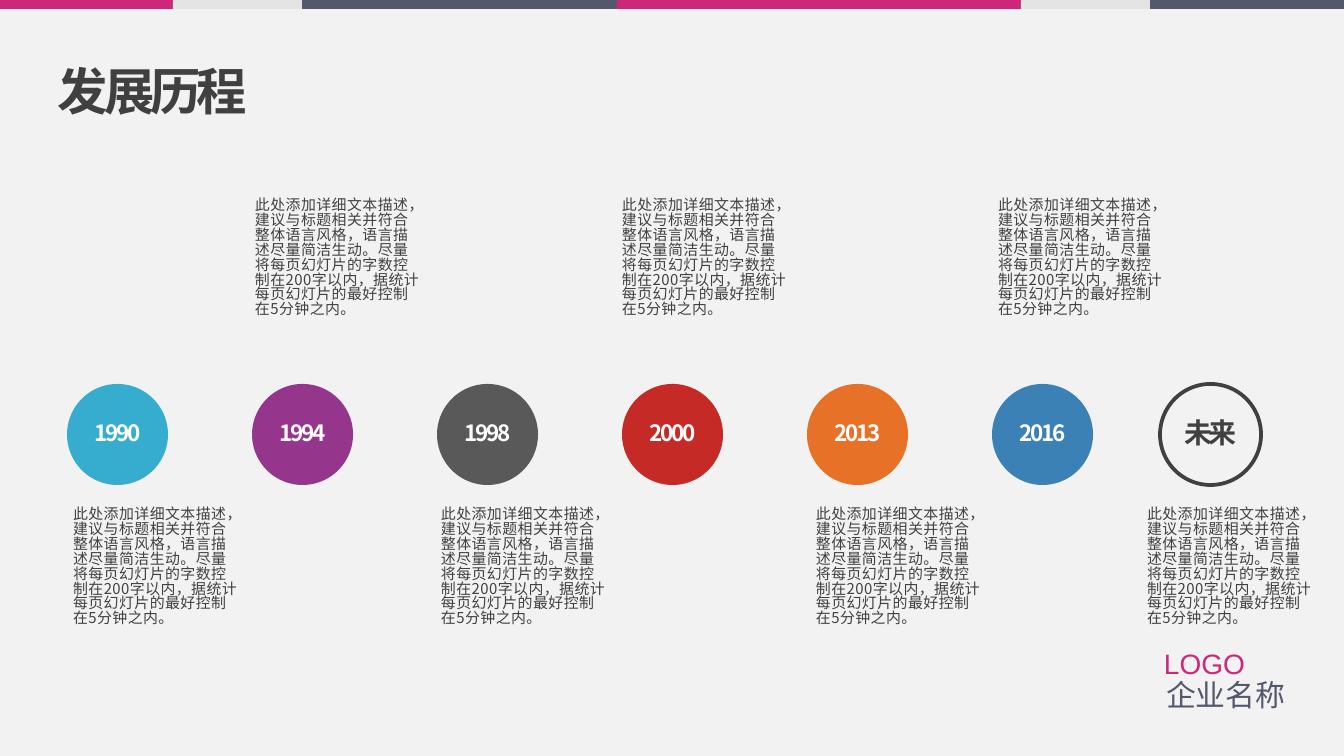
from lxml import etree
from pptx import Presentation
from pptx.dml.color import RGBColor
from pptx.enum.shapes import MSO_SHAPE
from pptx.enum.text import MSO_ANCHOR, MSO_AUTO_SIZE, PP_ALIGN
from pptx.oxml.ns import qn
from pptx.util import Pt

RECTANGLE, OVAL = MSO_SHAPE.RECTANGLE, MSO_SHAPE.OVAL
TOP, MIDDLE = MSO_ANCHOR.TOP, MSO_ANCHOR.MIDDLE
LEFT, CENTER = PP_ALIGN.LEFT, PP_ALIGN.CENTER
GROW = MSO_AUTO_SIZE.SHAPE_TO_FIT_TEXT

EMU_PER_PX = 914400 / 134.4
CJK = "Noto Sans CJK SC"

THEME = {
    "background": "F2F2F2", "slate": "53586C", "pink": "CD2779", "pale": "E4E4E4",
    "ink": "404040", "white": "FFFFFF",
    # Text styles: font, size, colour, bold, letter spacing, line spacing
    "title": (CJK, 27, "ink", True, -2.2, 0.9),
    "year": (CJK, 12, "white", True, -1.1, 0.9),
    "future": (CJK, 15, "ink", True, -2.2, 0.9),
    "description": (CJK, 8, "ink", False, 0.2, 0.83),
    "company": ("Arial", 16, "slate", False, 0, 1),
    "logo": ("Arial", 15, "pink", False, 0, 1),
}

TITLE = "发展历程"
DESCRIPTION = (
    "此处添加详细文本描述，建议与标题相关并符合整体语言风格，语言描述尽量简洁生动。"
    "尽量将每页幻灯片的字数控制在200字以内，据统计每页幻灯片的最好控制在5分钟之内。"
)
# Label, circle colour (None for an outline), left edge of the description
MILESTONES = [
    ("1990", "36ADCE", 63),
    ("1994", "95358B", 245),
    ("1998", "595959", 431),
    ("2000", "C62A27", 612),
    ("2013", "E67127", 806),
    ("2016", "3C81B5", 988),
    ("未来", None, 1137),
]
# Left, width and colour, from back to front
BAR_SEGMENTS = [
    (930, 414, "slate"), (0, 414, "pink"), (249, 414, "slate"),
    (173, 129, "pale"), (617, 414, "pink"), (1021, 129, "pale"),
]
BRANDING = [
    ("企业名称", "company", (1153, 667, 181, 56)),
    ("LOGO", "logo", (1151, 637, 203, 52)),
]

SLIDE_SIZE = (1344, 756)
BAR_HEIGHT = 9
TITLE_BOX = (48, 62, 331, 71)
CIRCLE_LEFT, CIRCLE_TOP, CIRCLE_SIZE, CIRCLE_PITCH = 67, 384, 101, 185
FUTURE_LEFT = 1160
DESCRIPTION_SIZE = (188, 160)
DESCRIPTION_ABOVE, DESCRIPTION_BELOW = 194, 503
INSETS, TIGHT_INSETS, WIDE_INSETS = (10, 5), (4, 5), (13, 7)


def px(*lengths):
    return [round(length * EMU_PER_PX) for length in lengths]


def color(name):
    return RGBColor.from_string(THEME.get(name, name))


def write(shape, text, style, alignment=LEFT, anchor=TOP, insets=INSETS):
    font_name, size, ink, bold, letter_spacing, line_spacing = THEME[style]
    frame = shape.text_frame
    frame.text = text
    frame.word_wrap = True
    frame.vertical_anchor = anchor
    side, end = px(*insets)
    frame.margin_left = frame.margin_right = side
    frame.margin_top = frame.margin_bottom = end
    paragraph = frame.paragraphs[0]
    paragraph.alignment = alignment
    paragraph.line_spacing = line_spacing
    run = paragraph.runs[0]
    run.font.size = Pt(size)
    run.font.bold = bold
    run.font.color.rgb = color(ink)
    run.font.name = font_name
    properties = run._r.get_or_add_rPr()
    properties.set("spc", str(round(letter_spacing * 100)))
    etree.SubElement(properties, qn("a:ea")).set("typeface", font_name)


def add_shape(slide, kind, box, fill):
    """Add a shape with a plain fill, or an ink outline when fill is None."""
    shape = slide.shapes.add_shape(kind, *px(*box))
    shape.shadow.inherit = False
    if fill:
        shape.fill.solid()
        shape.fill.fore_color.rgb = color(fill)
        shape.line.fill.background()
    else:
        shape.fill.background()
        shape.line.color.rgb = color("ink")
        shape.line.width = Pt(2)
    return shape


def add_milestone(slide, index, label, fill, description_left):
    left = CIRCLE_LEFT + index * CIRCLE_PITCH if fill else FUTURE_LEFT
    circle = add_shape(slide, OVAL, (left, CIRCLE_TOP, CIRCLE_SIZE, CIRCLE_SIZE), fill)
    write(circle, label, "year" if fill else "future", CENTER, MIDDLE,
          INSETS if fill else TIGHT_INSETS)
    top = DESCRIPTION_ABOVE if index % 2 else DESCRIPTION_BELOW
    description = slide.shapes.add_textbox(*px(description_left, top, *DESCRIPTION_SIZE))
    write(description, DESCRIPTION, "description")
    description.text_frame.auto_size = GROW


def main():
    presentation = Presentation()
    presentation.slide_width, presentation.slide_height = px(*SLIDE_SIZE)
    slide = presentation.slides.add_slide(presentation.slide_layouts[5])
    slide.background.fill.solid()
    slide.background.fill.fore_color.rgb = color("background")

    for left, width, fill in BAR_SEGMENTS:
        add_shape(slide, RECTANGLE, (left, 0, width, BAR_HEIGHT), fill)

    title = slide.shapes.title
    title.left, title.top, title.width, title.height = px(*TITLE_BOX)
    write(title, TITLE, "title")
    title.text_frame.auto_size = GROW

    for index, milestone in enumerate(MILESTONES):
        add_milestone(slide, index, *milestone)

    for text, style, box in BRANDING:
        write(slide.shapes.add_textbox(*px(*box)), text, style,
              anchor=MIDDLE, insets=WIDE_INSETS)

    presentation.save("out.pptx")


if __name__ == "__main__":
    main()
